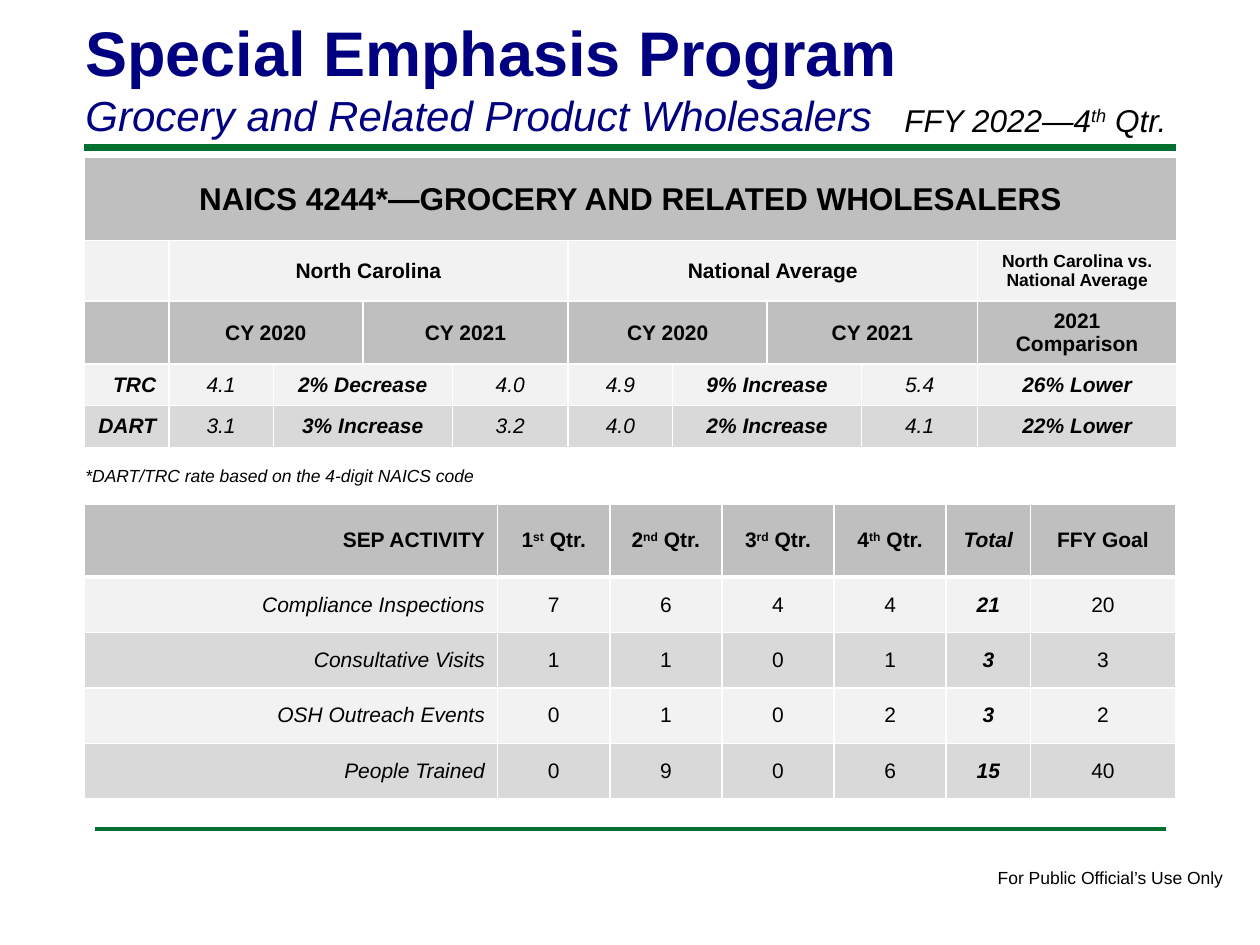
"""Build the grocery wholesalers special emphasis program slide."""
from dataclasses import dataclass

from lxml.etree import SubElement
from pptx import Presentation
from pptx.dml.color import RGBColor
from pptx.enum.shapes import MSO_CONNECTOR
from pptx.enum.text import MSO_ANCHOR, PP_ALIGN
from pptx.oxml.ns import qn
from pptx.util import Inches, Pt


@dataclass(frozen=True)
class Theme:
    font: str = "Arial"
    navy: str = "000080"
    green: str = "007030"
    black: str = "000000"
    white: str = "FFFFFF"
    dark: str = "BFBFBF"
    mid: str = "D9D9D9"
    light: str = "F2F2F2"
    title: int = 36
    subtitle: int = 24
    heading: int = 18
    body: int = 12
    small: int = 10


T = Theme()

RULES = [(0.67, 9.33, 1.17, 4), (0.75, 9.25, 6.58, 2)]

BOXES = [
    ((7.82, 6.83, 2.01, 0.27), False, [("For Public Official’s Use Only", T.small, T.black, "")]),
    ((0.58, 0.06, 8.25, 1.11), True, [
        ("Special Emphasis Program", T.title, T.navy, "b"),
        ("Grocery and Related Product Wholesalers", T.subtitle, T.navy, "i")]),
    ((0.58, 3.64, 3.37, 0.27), True,
     [("*DART/TRC rate based on the 4-digit NAICS code", T.small, T.black, "i")]),
    ((7.08, 0.75, 2.5, 0.4), True, [("FFY 2022—4^th^ Qtr.", T.heading, T.black, "i")]),
]

RATES = [
    ("TRC", "4.1", "2% Decrease", "4.0", "4.9", "9% Increase", "5.4", "26% Lower"),
    ("DART", "3.1", "3% Increase", "3.2", "4.0", "2% Increase", "4.1", "22% Lower"),
]
RATE_SPANS = (1, 1, 2, 1, 1, 2, 1, 1)
RATE_STYLES = ("bi", "i", "bi", "i", "i", "bi", "i", "bi")
RATE_COLS = (0.67, 0.83, 0.71, 0.71, 0.92, 0.83, 0.75, 0.75, 0.92, 1.58)
RATE_HEIGHTS = (0.66, 0.48, 0.5, 0.33, 0.33)
RATE_FILLS = (T.dark, T.light, T.dark, T.light, T.mid)
RATE_HEAD = [
    [("NAICS 4244*—GROCERY AND RELATED WHOLESALERS", 10, T.heading, "b")],
    [("", 1, T.body, "b"), ("North Carolina", 4, T.body, "b"),
     ("National Average", 4, T.body, "b"),
     ("North Carolina vs. National Average", 1, T.small, "b")],
    [("", 1, T.body, "b")]
    + [(year, 2, T.body, "b") for year in ("CY 2020", "CY 2021") * 2]
    + [("2021 Comparison", 1, T.body, "b")],
]

ACTIVITY_HEAD = ("SEP ACTIVITY", "1^st^ Qtr.", "2^nd^ Qtr.", "3^rd^ Qtr.", "4^th^ Qtr.",
                 "Total", "FFY Goal")
ACTIVITY = [
    ("Compliance Inspections", "7", "6", "4", "4", "21", "20"),
    ("Consultative Visits", "1", "1", "0", "1", "3", "3"),
    ("OSH Outreach Events", "0", "1", "0", "2", "3", "2"),
    ("People Trained", "0", "9", "0", "6", "15", "40"),
]
ACTIVITY_HEAD_STYLES = ("b", "b", "b", "b", "b", "bi", "b")
ACTIVITY_STYLES = ("i", "", "", "", "", "bi", "")
ACTIVITY_COLS = (3.28, 0.89, 0.89, 0.89, 0.89, 0.67, 1.15)
ACTIVITY_HEIGHTS = (0.58, 0.44, 0.44, 0.44, 0.44)
ACTIVITY_FILLS = (T.dark, T.light, T.mid, T.light, T.mid)


def add_runs(p, text, size, color, style):
    for i, part in enumerate(text.split("^")):
        r = p.add_run()
        r.text = part
        f = r.font
        f.name, f.size = T.font, Pt(size)
        f.bold, f.italic = "b" in style, "i" in style
        f.color.rgb = RGBColor.from_string(color)
        if i % 2:
            r._r.get_or_add_rPr().set("baseline", "30000")


def add_box(s, box, wrap, paras):
    tf = s.shapes.add_textbox(*map(Inches, box)).text_frame
    tf.word_wrap = wrap
    for i, para in enumerate(paras):
        p = tf.add_paragraph() if i else tf.paragraphs[0]
        add_runs(p, *para)


def add_rule(s, x1, x2, y, width):
    line = s.shapes.add_connector(
        MSO_CONNECTOR.STRAIGHT, Inches(x1), Inches(y), Inches(x2), Inches(y))
    line.line.color.rgb = RGBColor.from_string(T.green)
    line.line.width = Pt(width)
    SubElement(line._element.spPr, qn("a:effectLst"))


def style_cell(cell, fill, top, bottom):
    tcPr = cell._tc.get_or_add_tcPr()
    for side, width in (("L", 1), ("R", 1), ("T", top), ("B", bottom)):
        ln = SubElement(tcPr, qn(f"a:ln{side}"), w=str(Pt(width)))
        SubElement(SubElement(ln, qn("a:solidFill")), qn("a:srgbClr"), val=T.white)
    cell.fill.solid()
    cell.fill.fore_color.rgb = RGBColor.from_string(fill)
    cell.vertical_anchor = MSO_ANCHOR.MIDDLE


def add_grid(s, top, cols, heights, fills, rows, head_line=1):
    tbl = s.shapes.add_table(len(rows), len(cols), Inches(0.67), Inches(top),
                             Inches(sum(cols)), Inches(sum(heights))).table
    tbl.first_row = tbl.horz_banding = False
    for col, width in zip(tbl.columns, cols):
        col.width = Inches(width)
    for i, (row, height, fill) in enumerate(zip(rows, heights, fills)):
        tbl.rows[i].height = Inches(height)
        for j in range(len(cols)):
            style_cell(tbl.cell(i, j), fill, head_line if i == 1 else 1,
                       head_line if i == 0 else 1)
        j = 0
        for text, span, size, style in row:
            cell = tbl.cell(i, j)
            if span > 1:
                cell.merge(tbl.cell(i, j + span - 1))
            p = cell.text_frame.paragraphs[0]
            p.alignment = PP_ALIGN.RIGHT if j == 0 and span == 1 else PP_ALIGN.CENTER
            if text:
                add_runs(p, text, size, T.black, style)
            j += span


def body_row(texts, spans, styles):
    return [(text, span, T.body, style) for text, span, style in zip(texts, spans, styles)]


def main():
    prs = Presentation()
    prs.slide_width, prs.slide_height = Inches(10), Inches(7.5)
    s = prs.slides.add_slide(prs.slide_layouts[6])
    for rule in RULES:
        add_rule(s, *rule)
    for box in BOXES:
        add_box(s, *box)
    ones = (1,) * len(ACTIVITY_COLS)
    activity = [body_row(ACTIVITY_HEAD, ones, ACTIVITY_HEAD_STYLES)]
    activity += [body_row(row, ones, ACTIVITY_STYLES) for row in ACTIVITY]
    add_grid(s, 4, ACTIVITY_COLS, ACTIVITY_HEIGHTS, ACTIVITY_FILLS, activity, head_line=3)
    rates = RATE_HEAD + [body_row(row, RATE_SPANS, RATE_STYLES) for row in RATES]
    add_grid(s, 1.25, RATE_COLS, RATE_HEIGHTS, RATE_FILLS, rates)
    prs.save("out.pptx")


if __name__ == "__main__":
    main()
